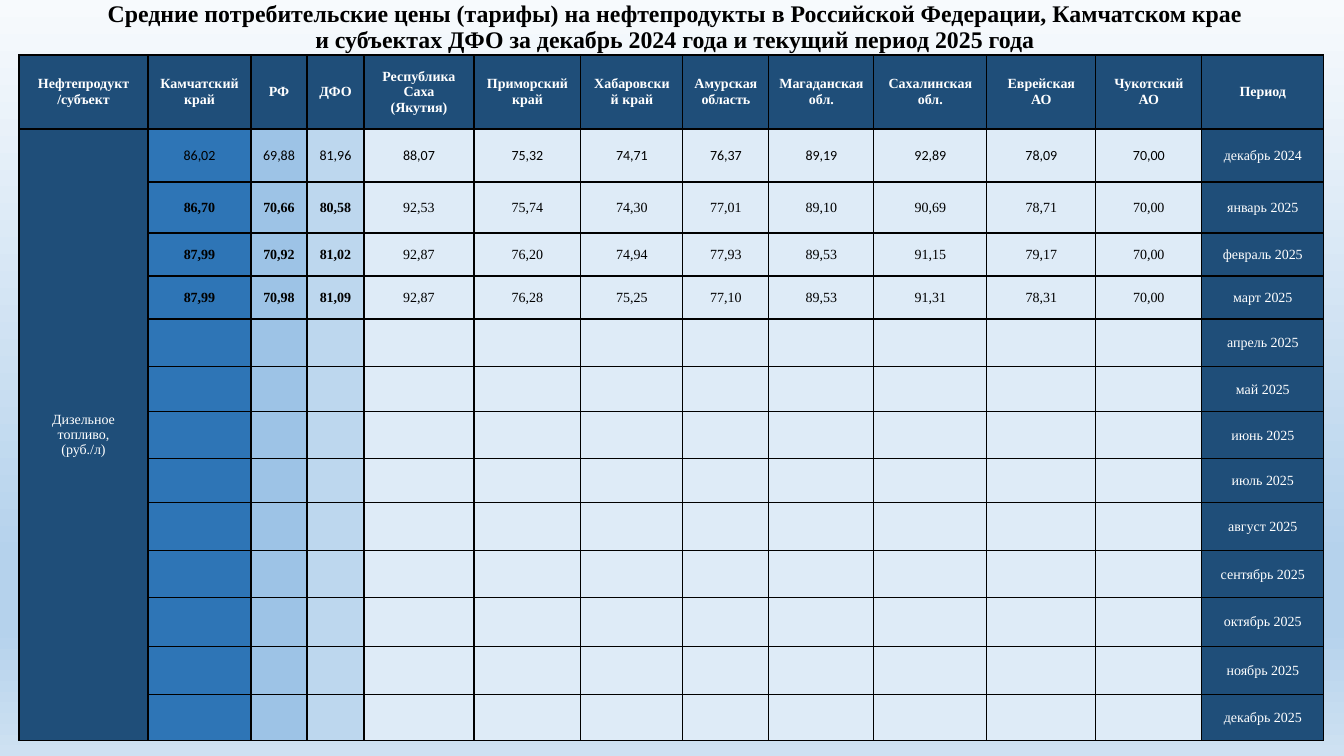
from itertools import pairwise

from lxml.etree import SubElement
from pptx import Presentation
from pptx.dml.color import RGBColor
from pptx.enum.text import MSO_ANCHOR, PP_ALIGN
from pptx.oxml.ns import qn
from pptx.util import Emu, Pt

PX = 914400 / 100.8
COLORS = {
    "black": "000000", "white": "FFFFFF", "navy": "1F4E79",
    "region": "2E75B6", "country": "9DC3E6", "district": "BDD7EE", "pale": "DEEBF7",
}
BACKGROUND = [(0, "F7FAFD"), (74, "B5D2EC"), (83, "B5D2EC"), (100, "CEE1F2")]
SERIF, SANS = "Times New Roman", "Calibri"

TITLE = ("Средние потребительские цены (тарифы) на нефтепродукты в Российской Федерации, "
         "Камчатском крае и субъектах ДФО за декабрь 2024 года и текущий период 2025 года")
HEADERS = ["Нефтепродукт\n/субъект", "Камчатский край", "РФ", "ДФО",
           "Республика Саха (Якутия)", "Приморский край", "Хабаровский край",
           "Амурская область", "Магаданская обл.", "Сахалинская обл.",
           "Еврейская АО", "Чукотский АО", "Период"]
PRODUCT = "Дизельное топливо,\n(руб./л)"
MONTHS = ["январь", "февраль", "март", "апрель", "май", "июнь", "июль",
          "август", "сентябрь", "октябрь", "ноябрь", "декабрь"]
PERIODS = ["декабрь 2024"] + [f"{month} 2025" for month in MONTHS]
PRICES = [line.split() for line in (
    "86,02 69,88 81,96 88,07 75,32 74,71 76,37 89,19 92,89 78,09 70,00",
    "86,70 70,66 80,58 92,53 75,74 74,30 77,01 89,10 90,69 78,71 70,00",
    "87,99 70,92 81,02 92,87 76,20 74,94 77,93 89,53 91,15 79,17 70,00",
    "87,99 70,98 81,09 92,87 76,28 75,25 77,10 89,53 91,31 78,31 70,00",
)]
PRICE_FILLS = ["region", "country", "district"] + ["pale"] * 8
COL_EDGES = [19, 148, 251, 307, 364, 474, 581, 683, 769, 874, 987, 1096, 1202, 1324]
ROW_EDGES = [55, 129, 182, 233, 276, 319, 367, 412, 459, 503, 551, 598, 647, 695, 741]


def px(n):
    return Emu(round(n * PX))


class SlideBuilder:
    def __init__(self, prs):
        self.s = prs.slides.add_slide(prs.slide_layouts[6])

    def background(self, stops):
        fill = self.s.background.fill
        fill.gradient()
        fill.gradient_angle = 270
        stop_list = self.s.element.find(".//" + qn("a:gsLst"))
        for stop in list(stop_list):
            stop_list.remove(stop)
        for percent, color in stops:
            stop = SubElement(stop_list, qn("a:gs"), pos=str(percent * 1000))
            SubElement(stop, qn("a:srgbClr"), val=color)

    def add_text(self, tf, text, size, color, bold=False, font=SERIF, spacing=None):
        """Fill a text frame with centred text, one paragraph per line."""
        for i, line in enumerate(text.split("\n")):
            p = tf.add_paragraph() if i else tf.paragraphs[0]
            p.alignment = PP_ALIGN.CENTER
            p.line_spacing = spacing
            r = p.add_run()
            r.text = line
            r.font.name = font
            r.font.size = Pt(size)
            r.font.bold = bold
            r.font.color.rgb = RGBColor.from_string(COLORS[color])

    def title(self, text, x, y, w, h):
        tf = self.s.shapes.add_textbox(px(x), px(y), px(w), px(h)).text_frame
        tf.word_wrap = True
        tf.vertical_anchor = MSO_ANCHOR.MIDDLE
        self.add_text(tf, text, 17, "black", bold=True, spacing=0.9)

    def table(self, col_edges, row_edges):
        x, y = col_edges[0], row_edges[0]
        frame = self.s.shapes.add_table(len(row_edges) - 1, len(col_edges) - 1, px(x), px(y),
                                        px(col_edges[-1] - x), px(row_edges[-1] - y))
        table = frame.table
        for col, (left, right) in zip(table.columns, pairwise(col_edges)):
            col.width = px(right - left)
        for row, (top, bottom) in zip(table.rows, pairwise(row_edges)):
            row.height = px(bottom - top)
        return table

    def cell(self, cell, fill, text="", color="white", **style):
        cell.vertical_anchor = MSO_ANCHOR.MIDDLE
        self.borders(cell)
        cell.fill.solid()
        cell.fill.fore_color.rgb = RGBColor.from_string(COLORS[fill])
        if text:
            self.add_text(cell.text_frame, text, 10, color, **style)

    def borders(self, cell):
        props = cell._tc.get_or_add_tcPr()
        for side in ("a:lnL", "a:lnR", "a:lnT", "a:lnB"):
            line = SubElement(props, qn(side), w=str(Pt(1)))
            solid = SubElement(line, qn("a:solidFill"))
            SubElement(solid, qn("a:srgbClr"), val=COLORS["black"])


def main():
    prs = Presentation()
    prs.slide_width, prs.slide_height = px(1344), px(756)
    slide = SlideBuilder(prs)
    slide.background(BACKGROUND)
    slide.title(TITLE, 93, 0, 1164, 55)

    table = slide.table(COL_EDGES, ROW_EDGES)
    for col, header in enumerate(HEADERS):
        slide.cell(table.cell(0, col), "navy", header, bold=True)
    last_row, last_col = len(PERIODS), len(HEADERS) - 1
    table.cell(1, 0).merge(table.cell(last_row, 0))
    for row, period in enumerate(PERIODS, 1):
        slide.cell(table.cell(row, 0), "navy", PRODUCT if row == 1 else "")
        prices = PRICES[row - 1] if row <= len(PRICES) else [""] * len(PRICE_FILLS)
        for col, (price, fill) in enumerate(zip(prices, PRICE_FILLS), 1):
            slide.cell(table.cell(row, col), fill, price, "black",
                       bold=row > 1 and fill != "pale", font=SANS if row == 1 else SERIF)
        slide.cell(table.cell(row, last_col), "navy", period)
    prs.save("out.pptx")


if __name__ == "__main__":
    main()
